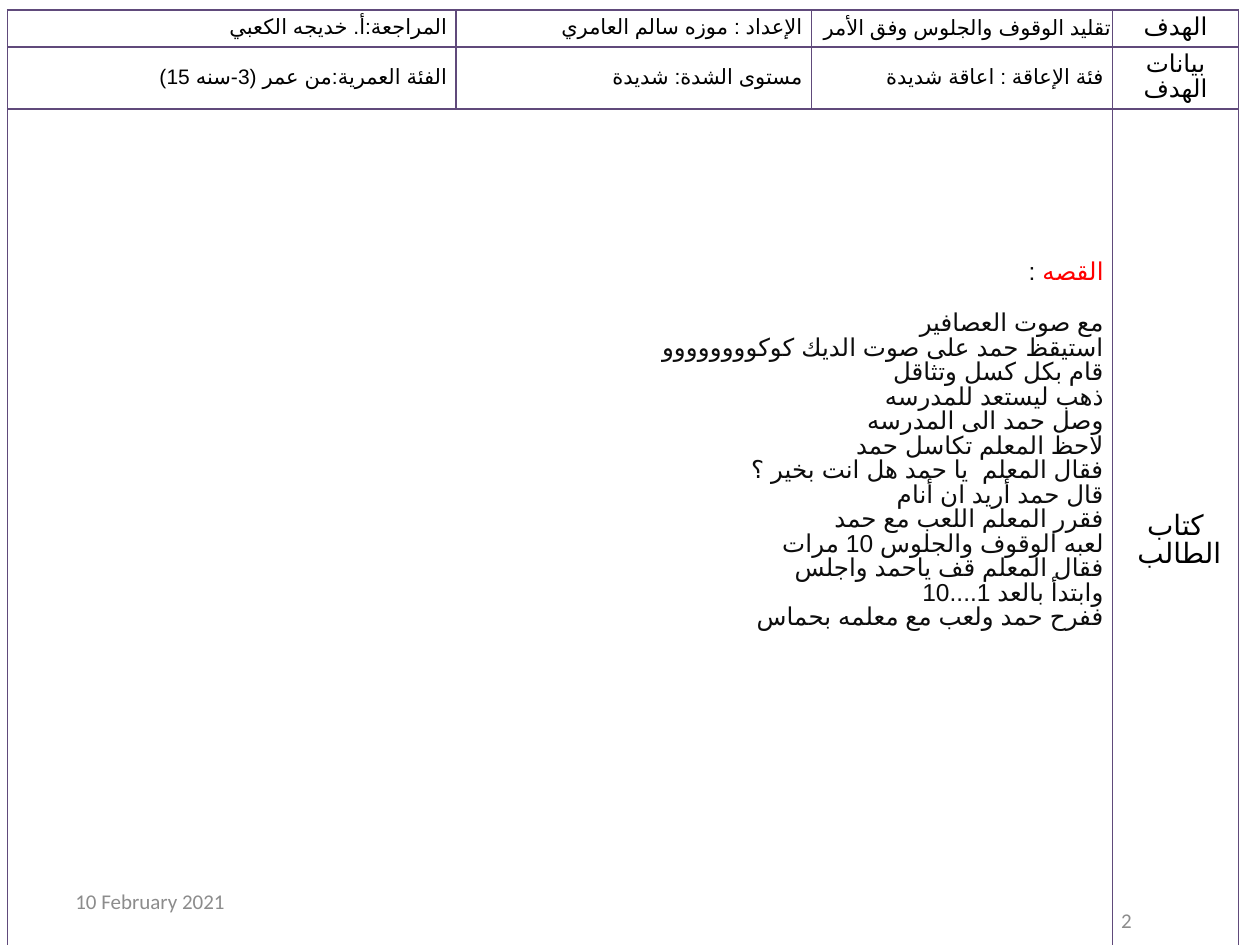
"""Build a right-to-left lesson sheet with a goal table and a short story."""
from lxml import etree
from pptx import Presentation
from pptx.dml.color import RGBColor
from pptx.enum.lang import MSO_LANGUAGE_ID
from pptx.enum.text import MSO_ANCHOR, PP_ALIGN
from pptx.oxml.ns import qn
from pptx.util import Inches, Pt

LEFT, RIGHT, CENTER = PP_ALIGN.LEFT, PP_ALIGN.RIGHT, PP_ALIGN.CENTER
MIDDLE = MSO_ANCHOR.MIDDLE
ARABIC = MSO_LANGUAGE_ID.ARABIC_UAE
BLACK = RGBColor(0x00, 0x00, 0x00)
INK = RGBColor(0x0D, 0x0D, 0x0D)
RED = RGBColor(0xFF, 0x00, 0x00)
GRAY = RGBColor(0x8C, 0x8C, 0x8C)
PURPLE = RGBColor(0x60, 0x4A, 0x7B)

COLUMN_WIDTHS = [3.56, 2.82, 2.39, 1]
ROW_HEIGHTS = [0.29, 0.49, 6.64]
CELL_MARGINS = (0.07, 0.05, 0.07, 0.05)
TIGHT_MARGINS = (0.01, 0.01, 0.01, 0)
STORY_MARGINS = (0.07, 0.05, 0.07, 1.34)
LABEL_MARGINS = (0.07, 0.27, 0.07, 0.05)

HEADER_ROWS = [
    ["المراجعة:أ. خديجه الكعبي ", "الإعداد : موزه سالم العامري ",
     "تقليد الوقوف والجلوس وفق الأمر ", "الهدف"],
    ["الفئة العمرية:من عمر (3-سنه 15)", "مستوى الشدة: شديدة",
     "فئة الإعاقة : اعاقة شديدة", "بيانات الهدف"],
]
STORY_HEADING = [("القصه ", RED), (":", INK)]
STORY_LINES = [
    "مع صوت العصافير ",
    "استيقظ حمد على صوت الديك كوكوووووووو ",
    "قام بكل كسل وتثاقل ",
    "ذهب ليستعد للمدرسه",
    "وصل حمد الى المدرسه ",
    "لاحظ المعلم تكاسل حمد ",
    "فقال المعلم  يا حمد هل انت بخير ؟",
    "قال حمد أريد ان أنام",
    "فقرر المعلم اللعب مع حمد ",
    "لعبه الوقوف والجلوس 10 مرات ",
    "فقال المعلم قف ياحمد واجلس ",
    "وابتدأ بالعد 1....10 ",
    "ففرح حمد ولعب مع معلمه بحماس ",
]
STUDENT_BOOK = "كتاب الطالب "
FOOTERS = [
    ("10 February 2021", 0.5, 6.95, LEFT),
    ("2", 6.75, 7.1, RIGHT),
]


def add_run(paragraph, text, size, color, font_name):
    run = paragraph.add_run()
    run.text = text
    run.font.size = Pt(size)
    run.font.name = font_name
    run.font.color.rgb = color
    return run


def set_borders(cell):
    properties = cell._tc.get_or_add_tcPr()
    for index, side in enumerate(("a:lnL", "a:lnR", "a:lnT", "a:lnB")):
        line = etree.Element(qn(side), w=str(Pt(1)))
        fill = etree.SubElement(line, qn("a:solidFill"))
        etree.SubElement(fill, qn("a:srgbClr"), val=str(PURPLE))
        properties.insert(index, line)


def fill_cell(cell, paragraphs, size, alignment, margins=CELL_MARGINS):
    cell.vertical_anchor = MIDDLE
    (cell.margin_left, cell.margin_top,
     cell.margin_right, cell.margin_bottom) = map(Inches, margins)
    frame = cell.text_frame
    for index, runs in enumerate(paragraphs):
        paragraph = frame.add_paragraph() if index else frame.paragraphs[0]
        paragraph.alignment = alignment
        paragraph.line_spacing = Pt(size)
        paragraph._p.get_or_add_pPr().set("rtl", "1")
        for text, color in runs:
            run = add_run(paragraph, text, size, color, "Arial")
            run.font.language_id = ARABIC
            etree.SubElement(run._r.get_or_add_rPr(), qn("a:cs"), typeface="Arial")


def add_goal_table(slide):
    table = slide.shapes.add_table(
        len(ROW_HEIGHTS), len(COLUMN_WIDTHS), Inches(0.06), Inches(0.08),
        Inches(sum(COLUMN_WIDTHS)), Inches(sum(ROW_HEIGHTS))).table
    table.first_row = table.horz_banding = False
    for column, width in zip(table.columns, COLUMN_WIDTHS):
        column.width = Inches(width)
    for row, height in zip(table.rows, ROW_HEIGHTS):
        row.height = Inches(height)
    for cell in table.iter_cells():
        set_borders(cell)
        cell.fill.background()

    label_column = len(COLUMN_WIDTHS) - 1
    for row, texts in enumerate(HEADER_ROWS):
        for column, text in enumerate(texts):
            is_label = column == label_column
            margins = TIGHT_MARGINS if (row, column) == (0, 2) else CELL_MARGINS
            fill_cell(table.cell(row, column), [[(text, BLACK)]],
                      14 if is_label else 12, CENTER if is_label else RIGHT, margins)

    story = table.cell(2, 0)
    story.merge(table.cell(2, label_column - 1))
    lines = [[(text, INK)] for text in STORY_LINES]
    fill_cell(story, [STORY_HEADING] + lines, 14, RIGHT, STORY_MARGINS)
    story.text_frame.paragraphs[0].space_after = Pt(15.5)
    fill_cell(table.cell(2, label_column), [[(STUDENT_BOOK, BLACK)]],
              16, CENTER, LABEL_MARGINS)


def add_footer(slide, text, left, top, alignment):
    box = slide.shapes.add_textbox(Inches(left), Inches(top), Inches(2.33), Inches(0.4))
    frame = box.text_frame
    frame.word_wrap = True
    frame.vertical_anchor = MIDDLE
    paragraph = frame.paragraphs[0]
    paragraph.alignment = alignment
    add_run(paragraph, text, 12, GRAY, "Calibri")


def main():
    presentation = Presentation()
    presentation.slide_width = Inches(10)
    presentation.slide_height = Inches(7.5)
    slide = presentation.slides.add_slide(presentation.slide_layouts[6])
    add_goal_table(slide)
    for footer in FOOTERS:
        add_footer(slide, *footer)
    presentation.save("out.pptx")


if __name__ == "__main__":
    main()
